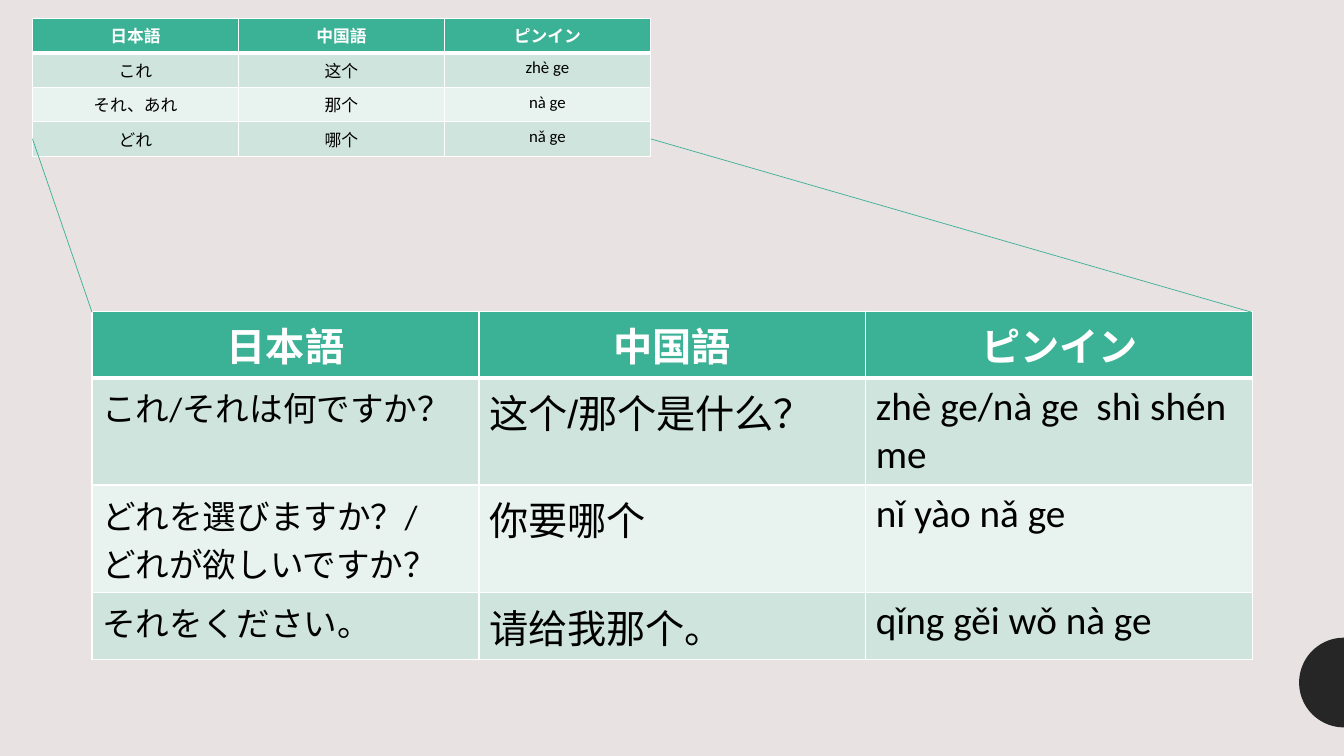
"""Build a slide of Chinese demonstratives with example phrases."""
import math

import lxml.etree
import pptx
import pptx.dml.color
import pptx.enum.shapes
import pptx.enum.text
import pptx.oxml.ns
import pptx.util

Cm = pptx.util.Cm
RGBColor = pptx.dml.color.RGBColor
CENTER = pptx.enum.text.PP_ALIGN.CENTER
LEFT = pptx.enum.text.PP_ALIGN.LEFT

GREEN = RGBColor(0x3B, 0xB1, 0x95)
BAND_DARK = RGBColor(0xCE, 0xE4, 0xDD)
BAND_LIGHT = RGBColor(0xE8, 0xF2, 0xEF)
WHITE = RGBColor(0xFF, 0xFF, 0xFF)
BLACK = RGBColor(0x00, 0x00, 0x00)
CHARCOAL = RGBColor(0x26, 0x26, 0x26)
BACKDROP = RGBColor(0xE8, 0xE2, 0xE3)

LANGUAGES = ["日本語", "中国語", "ピンイン"]
WORDS = [
    LANGUAGES,
    ["これ", "这个", "zhè ge"],
    ["それ、あれ", "那个", "nà ge"],
    ["どれ", "哪个", "nǎ ge"],
]
PHRASES = [
    LANGUAGES,
    ["これ/それは何ですか？", "这个/那个是什么？", "zhè ge/nà ge  shì shén me"],
    ["どれを選びますか？/\nどれが欲しいですか？", "你要哪个", "nǐ yào nǎ ge"],
    ["それをください。", "请给我那个。", "qǐng gěi wǒ nà ge"],
]


class SlidePainter:
    """Hold the table style and the current slide."""

    body_fonts = ["Calibri", "Arial", "Calibri"]

    def __init__(self, slide):
        """Set the slide and its background."""
        self.slide = slide
        slide.background.fill.solid()
        slide.background.fill.fore_color.rgb = BACKDROP

    def border(self, cell, side, points):
        """Draw one white cell edge."""
        qn = pptx.oxml.ns.qn
        edge = lxml.etree.SubElement(
            cell._tc.get_or_add_tcPr(), qn(f"a:ln{side}"), w=str(pptx.util.Pt(points)))
        paint = lxml.etree.SubElement(edge, qn("a:solidFill"))
        lxml.etree.SubElement(paint, qn("a:srgbClr"), val=str(WHITE))

    def cell_text(self, cell, text, size, font, color, bold, align):
        """Fill a cell with one run per paragraph."""
        for index, line in enumerate(text.split("\n")):
            frame = cell.text_frame
            paragraph = frame.add_paragraph() if index else frame.paragraphs[0]
            paragraph.alignment = align
            run = paragraph.add_run()
            run.text = line
            run.font.size = pptx.util.Pt(size)
            run.font.name = font
            run.font.bold = bold
            run.font.color.rgb = color

    def table(self, rows, left, top, column_width, heights, header_size, body_sizes, body_align):
        """Add a banded table with a green header."""
        grid = self.slide.shapes.add_table(
            len(rows), len(rows[0]), Cm(left), Cm(top),
            Cm(column_width * len(rows[0])), Cm(sum(heights))).table
        for column in grid.columns:
            column.width = Cm(column_width)
        for r, (texts, height) in enumerate(zip(rows, heights)):
            grid.rows[r].height = Cm(height)
            for c, text in enumerate(texts):
                cell = grid.cell(r, c)
                self.border(cell, "L", 1)
                self.border(cell, "R", 1)
                self.border(cell, "T", 3 if r == 1 else 1)
                self.border(cell, "B", 3 if r == 0 else 1)
                cell.fill.solid()
                if r == 0:
                    cell.fill.fore_color.rgb = GREEN
                    self.cell_text(cell, text, header_size, "Calibri", WHITE, True, CENTER)
                else:
                    cell.fill.fore_color.rgb = BAND_DARK if r % 2 else BAND_LIGHT
                    self.cell_text(cell, text, body_sizes[c], self.body_fonts[c],
                                   BLACK, False, body_align)

    def line(self, start, end):
        """Add a thin green line."""
        zoom_line = self.slide.shapes.add_connector(
            pptx.enum.shapes.MSO_CONNECTOR.STRAIGHT, *map(Cm, start + end))
        zoom_line.line.color.rgb = GREEN
        zoom_line.line.width = pptx.util.Pt(0.5)
        lxml.etree.SubElement(zoom_line._element.spPr, pptx.oxml.ns.qn("a:effectLst"))

    def half_disc(self, center_x, center_y, radius, steps=48):
        """Add the left half of a disc."""
        angles = [math.pi * (0.5 + step / steps) for step in range(steps + 1)]
        arc = [(Cm(center_x + radius * math.cos(a)), Cm(center_y - radius * math.sin(a)))
               for a in angles]
        builder = self.slide.shapes.build_freeform(*arc[0])
        builder.add_line_segments(arc[1:], close=True)
        disc = builder.convert_to_shape()
        disc.shadow.inherit = False
        disc.fill.solid()
        disc.fill.fore_color.rgb = CHARCOAL
        disc.line.fill.background()


def main():
    """Build and save the slide."""
    deck = pptx.Presentation()
    deck.slide_width, deck.slide_height = Cm(33.87), Cm(19.05)
    painter = SlidePainter(deck.slides.add_slide(deck.slide_layouts[6]))
    painter.half_disc(33.87, 17.2, 1.13)
    painter.table(WORDS, 0.82, 0.46, 5.19, [0.87] * 4, 12, [12, 12, 12], CENTER)
    painter.table(PHRASES, 2.32, 7.84, 9.75, [1.65, 2.7, 2.7, 1.65], 28, [24, 28, 28], LEFT)
    painter.line((0.82, 3.5), (2.32, 7.87))
    painter.line((16.4, 3.5), (31.55, 7.87))
    deck.save("out.pptx")


if __name__ == "__main__":
    main()
